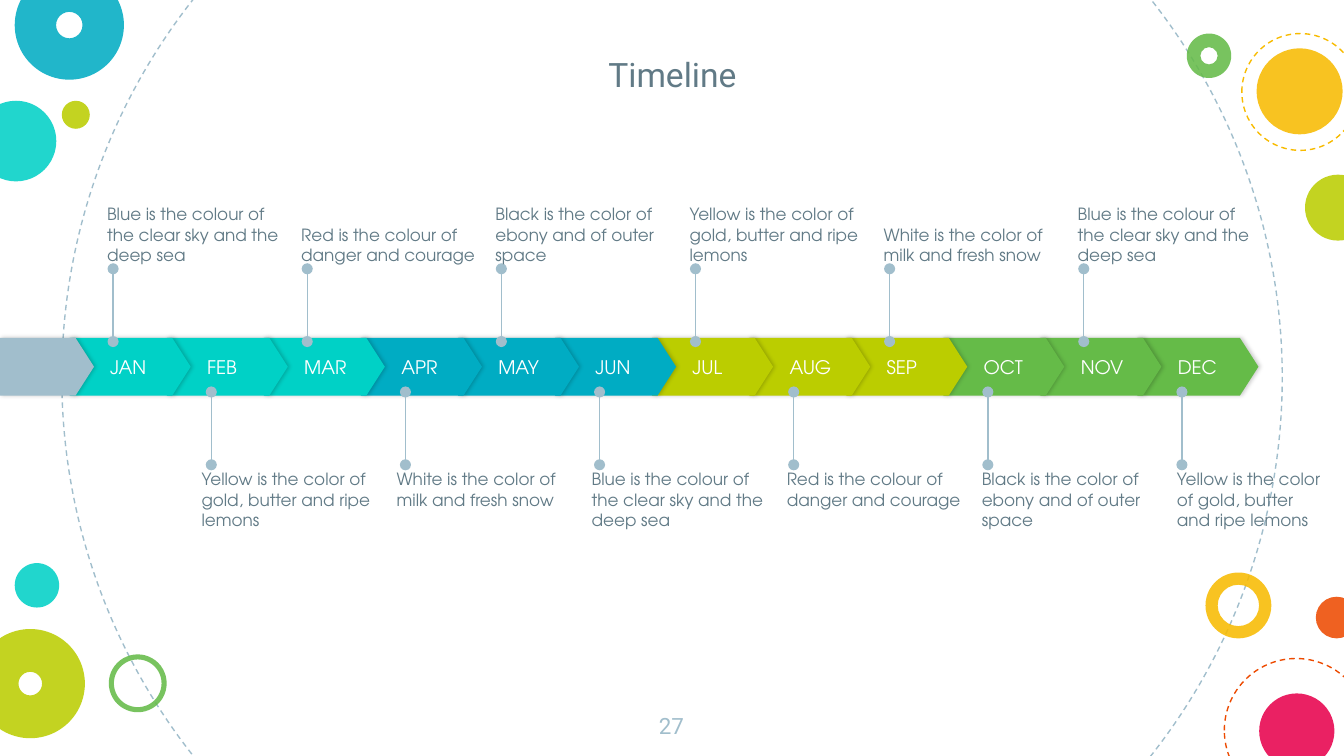
from lxml.etree import SubElement
from pptx import Presentation
from pptx.dml.color import RGBColor
from pptx.enum.dml import MSO_LINE
from pptx.enum.shapes import MSO_CONNECTOR, MSO_SHAPE
from pptx.enum.text import MSO_ANCHOR, PP_ALIGN
from pptx.oxml.ns import qn
from pptx.util import Pt

WHITE = RGBColor(0xFF, 0xFF, 0xFF)
SLATE = RGBColor(0x61, 0x7A, 0x86)
MIST = RGBColor(0xA1, 0xBE, 0xCC)
TURQUOISE = RGBColor(0x00, 0xD1, 0xC6)
BLUE = RGBColor(0x00, 0xAC, 0xC3)
LIME = RGBColor(0xBB, 0xCD, 0x00)
GREEN = RGBColor(0x65, 0xBB, 0x48)
AMBER = RGBColor(0xF8, 0xBB, 0x00)
ORANGE = RGBColor(0xED, 0x4A, 0x00)
PINK = RGBColor(0xE8, 0x00, 0x4C)

HEADING_FONT = "Roboto"
BODY_FONT = "TeX Gyre Adventor"

RINGS = [
    (33.1, -124.6, 653.8, MIST),
    (655.9, 352.8, 77, ORANGE),
    (665.3, 18, 62.6, AMBER),
]
DISCS = [
    (-13, 54, 43.2, TURQUOISE),
    (33.1, 54, 15, LIME),
    (704.9, 319.7, 22.3, ORANGE),
    (674.6, 371.5, 40.3, PINK),
    (673.2, 25.9, 46.1, AMBER),
    (699.1, 93.6, 35.3, LIME),
    (7.9, 301.7, 23.8, TURQUOISE),
]
DONUTS = [
    (645.8, 306.7, 35.3, AMBER, 0.186),
    (7.9, -15.8, 58.5, BLUE, 0.379),
    (58.3, 350.6, 31, GREEN, 0.088),
    (-13, 337, 58.5, LIME, 0.392),
    (635.8, 18, 23.8, GREEN, 0.306),
]

SKY = "Blue is the colour of the clear sky and the deep sea"
DANGER = "Red is the colour of danger and courage"
EBONY = "Black is the color of ebony and of outer space"
GOLD = "Yellow is the color of gold, butter and ripe lemons"
MILK = "White is the color of milk and fresh snow"

MONTHS = ["JAN", "FEB", "MAR", "APR", "MAY", "JUN",
          "JUL", "AUG", "SEP", "OCT", "NOV", "DEC"]
QUARTER_COLORS = [TURQUOISE, BLUE, LIME, GREEN]
UPPER_NOTES = [SKY, DANGER, EBONY, GOLD, MILK, SKY]
LOWER_NOTES = [GOLD, MILK, SKY, DANGER, EBONY, GOLD]

FIRST_MONTH = 37.4
STEP = 52


def set_text(sp, text, font, size, color, align=PP_ALIGN.LEFT,
             anchor=MSO_ANCHOR.TOP, insets=(0, 0, 0, 0)):
    tf = sp.text_frame
    left, top, right, bottom = (Pt(v) for v in insets)
    frame_format = {
        "word_wrap": True, "vertical_anchor": anchor,
        "margin_left": left, "margin_top": top,
        "margin_right": right, "margin_bottom": bottom,
    }
    for name, value in frame_format.items():
        setattr(tf, name, value)
    p = tf.paragraphs[0]
    p.alignment = align
    r = p.add_run()
    r.text = text
    for name, value in {"name": font, "size": Pt(size)}.items():
        setattr(r.font, name, value)
    r.font.color.rgb = color


def add_filled(s, kind, x, y, w, h, color, adj=None):
    sp = s.shapes.add_shape(kind, Pt(x), Pt(y), Pt(w), Pt(h))
    sp.shadow.inherit = False
    sp.fill.solid()
    sp.fill.fore_color.rgb = color
    sp.line.fill.background()
    if adj is not None:
        sp.adjustments[0] = adj
    return sp


def add_background(s, x, y):
    for dx, dy, size, color in RINGS:
        sp = add_filled(s, MSO_SHAPE.OVAL, x + dx, y + dy, size, size, color)
        sp.fill.background()
        sp.line.color.rgb = color
        sp.line.width = Pt(0.75)
        sp.line.dash_style = MSO_LINE.DASH
    circles = [(MSO_SHAPE.OVAL, *disc, None) for disc in DISCS]
    circles += [(MSO_SHAPE.DONUT, *donut) for donut in DONUTS]
    for kind, dx, dy, size, color, adj in circles:
        sp = add_filled(s, kind, x + dx, y + dy, size, size, color, adj)
        clr = sp._element.spPr.find(qn("a:solidFill")).find(qn("a:srgbClr"))
        SubElement(clr, qn("a:alpha"), val="87000")


def add_title(s, x, y, w, h):
    sp = s.shapes.title
    box = {"left": x, "top": y, "width": w, "height": h}
    for name, value in box.items():
        setattr(sp, name, Pt(value))
    set_text(sp, "Timeline", HEADING_FONT, 18, SLATE, PP_ALIGN.CENTER,
             MSO_ANCHOR.BOTTOM, (7.2,) * 4)


def add_page_number(s, x, y, w, h):
    sp = s.shapes.add_textbox(Pt(x), Pt(y), Pt(w), Pt(h))
    set_text(sp, "27", HEADING_FONT, 12, MIST, PP_ALIGN.CENTER,
             insets=(7.2,) * 4)


def add_arrow(s, x, y, w, color):
    sp = add_filled(s, MSO_SHAPE.PENTAGON, x, y, w, 31, color, 0.32)
    effects = sp._element.spPr.find(qn("a:effectLst"))
    shadow = SubElement(effects, qn("a:outerShdw"), blurRad=str(Pt(2.2)),
                        dist=str(Pt(0.8)), dir="0", algn="ctr",
                        rotWithShape="0")
    clr = SubElement(shadow, qn("a:srgbClr"), val="000000")
    SubElement(clr, qn("a:alpha"), val="20000")
    return sp


def add_stem(s, x, y1, y2):
    cn = s.shapes.add_connector(MSO_CONNECTOR.STRAIGHT,
                                Pt(x), Pt(y1), Pt(x), Pt(y2))
    cn.line.color.rgb = MIST
    cn.line.width = Pt(0.75)
    spPr = cn._element.spPr
    for end in ("a:headEnd", "a:tailEnd"):
        SubElement(spPr.find(qn("a:ln")), qn(end), type="oval")
    SubElement(spPr, qn("a:effectLst"))


def add_note(s, x, y, w, text, anchor):
    sp = s.shapes.add_textbox(Pt(x), Pt(y), Pt(w), Pt(41.8))
    set_text(sp, text, BODY_FONT, 9, SLATE, anchor=anchor)


def add_timeline(s, x, y, w):
    for i, month in reversed(list(enumerate(MONTHS))):
        sp = add_arrow(s, x + FIRST_MONTH + i * STEP, y + 81, 64.8,
                       QUARTER_COLORS[i // 3])
        set_text(sp, month, BODY_FONT, 10, WHITE, anchor=MSO_ANCHOR.MIDDLE,
                 insets=(21.6, 0, 0, 0))
    add_arrow(s, x, y + 81, 50.4, MIST)

    for i, (upper, lower) in enumerate(zip(UPPER_NOTES, LOWER_NOTES)):
        stem_x = x + 60.6 + i * 2 * STEP
        add_stem(s, stem_x, y + 83, y + 44)
        add_note(s, x + 57.4 + i * 2 * STEP, y, 98.6, upper, MSO_ANCHOR.BOTTOM)
        add_stem(s, stem_x + STEP + 0.6, y + 149, y + 110)
        note_x = x + 108 + i * 104.5
        add_note(s, note_x, y + 151.3, min(98.6, x + w - 8 - note_x), lower,
                 MSO_ANCHOR.TOP)


def main():
    prs = Presentation()
    prs.slide_width, prs.slide_height = Pt(720), Pt(405)
    s = prs.slides.add_slide(prs.slide_layouts[5])
    add_background(s, 0, 0)
    add_title(s, 152.6, 7.2, 415.4, 50.4)
    add_page_number(s, 341.3, 374.4, 36.7, 31)
    add_timeline(s, 0, 100, 720)
    prs.save("out.pptx")


if __name__ == "__main__":
    main()
